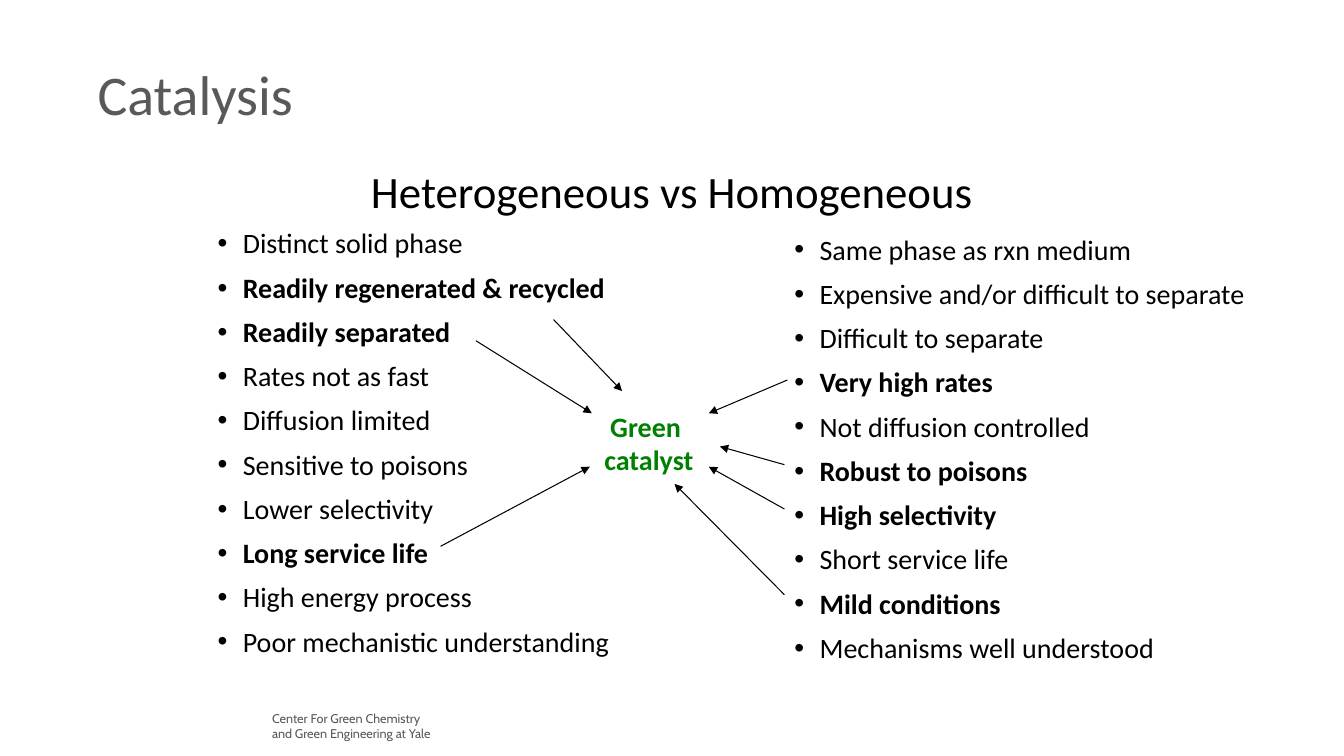
from pptx import Presentation
from pptx import util as u
from pptx.dml.color import RGBColor
from pptx.enum import shapes, text
from pptx.oxml.ns import qn
from lxml import etree

COLORS = {"ink": "000000", "gray": "595959", "green": "008000", "white": "FFFFFF"}

HETEROGENEOUS = [
    ("Distinct solid phase", False),
    ("Readily regenerated & recycled", True),
    ("Readily separated", True),
    ("Rates not as fast", False),
    ("Diffusion limited", False),
    ("Sensitive to poisons", False),
    ("Lower selectivity", False),
    ("Long service life", True),
    ("High energy process", False),
    ("Poor mechanistic understanding", False),
]
HOMOGENEOUS = [
    ("Same phase as rxn medium", False),
    ("Expensive and/or difficult to separate", False),
    ("Difficult to separate", False),
    ("Very high rates", True),
    ("Not diffusion controlled", False),
    ("Robust to poisons", True),
    ("High selectivity", True),
    ("Short service life", False),
    ("Mild conditions", True),
    ("Mechanisms well understood", False),
]
ARROWS = [
    (4.72, 3.38, 5.87, 4.1),
    (5.49, 3.17, 6.17, 3.88),
    (4.37, 5.42, 5.85, 4.63),
    (7.78, 4.61, 7.14, 4.43),
    (7.81, 3.77, 7.03, 4.1),
    (7.78, 5.05, 7.03, 4.63),
    (7.78, 5.9, 6.69, 4.8),
]


def rgb(name):
    return RGBColor.from_string(COLORS[name])


def inches(values):
    return [u.Inches(v) for v in values]


def format_runs(p, size, color, bold=False, font="Calibri"):
    for r in p.runs:
        r.font.name = font
        r.font.size = u.Pt(size)
        r.font.bold = bold
        r.font.color.rgb = rgb(color)


def fill_text(sp, content, size, color, bold=False, font="Calibri", align=text.PP_ALIGN.LEFT):
    sp.text_frame.text = content
    for p in sp.text_frame.paragraphs:
        p.alignment = align
        format_runs(p, size, color, bold, font)


def add_label(s, box, content, size, color, font="Calibri", wrap=False):
    sp = s.shapes.add_textbox(*inches(box))
    sp.text_frame.word_wrap = wrap
    fill_text(sp, content, size, color, font=font)


def add_bullets(s, box, items):
    tf = s.shapes.add_textbox(*inches(box)).text_frame
    tf.word_wrap = True
    for i, (item, bold) in enumerate(items):
        p = tf.add_paragraph() if i else tf.paragraphs[0]
        p.text = item
        p.line_spacing = 0.9
        p.space_before = u.Pt(10 if i else 0)
        pPr = p._p.get_or_add_pPr()
        pPr.set("marL", str(u.Inches(0.25)))
        pPr.set("indent", str(-u.Inches(0.25)))
        etree.SubElement(pPr, qn("a:buFont")).set("typeface", "Arial")
        etree.SubElement(pPr, qn("a:buChar")).set("char", "•")
        format_runs(p, 20, "ink", bold)


def add_arrow(s, ends):
    c = s.shapes.add_connector(shapes.MSO_CONNECTOR.STRAIGHT, *inches(ends))
    c.line.color.rgb = rgb("ink")
    c.line.width = u.Pt(0.75)
    etree.SubElement(c.line._get_or_add_ln(), qn("a:tailEnd")).set("type", "triangle")
    etree.SubElement(c._element.spPr, qn("a:effectLst"))


def add_goal(s, box, content):
    sp = s.shapes.add_shape(shapes.MSO_SHAPE.RECTANGLE, *inches(box))
    sp.shadow.inherit = False
    sp.fill.solid()
    sp.fill.fore_color.rgb = rgb("white")
    sp.line.fill.background()
    sp.text_frame.word_wrap = False
    sp.text_frame.vertical_anchor = text.MSO_ANCHOR.TOP
    fill_text(sp, content, 20, "green", bold=True, align=text.PP_ALIGN.CENTER)


def set_title(s, box, content):
    sp = s.shapes.title
    sp.left, sp.top, sp.width, sp.height = inches(box)
    sp.text_frame.vertical_anchor = text.MSO_ANCHOR.MIDDLE
    fill_text(sp, content, 32, "ink", align=text.PP_ALIGN.CENTER)
    sp.text_frame.paragraphs[0].line_spacing = 0.9


def main():
    prs = Presentation()
    prs.slide_width, prs.slide_height = inches((13.33, 7.5))
    s = prs.slides.add_slide(prs.slide_layouts[5])
    set_title(s, (2.25, 1.31, 8.83, 1.22), "Heterogeneous vs Homogeneous")
    add_label(s, (0.87, 0.54, 2.16, 0.77), "Catalysis", 40, "gray")
    add_bullets(s, (2.06, 2.23, 4.39, 4.47), HETEROGENEOUS)
    for ends in ARROWS:
        add_arrow(s, ends)
    add_goal(s, (5.89, 4.01, 1.09, 0.77), "Green \ncatalyst")
    add_bullets(s, (7.78, 2.29, 4.78, 4.35), HOMOGENEOUS)
    add_label(s, (2.6, 7, 1.86, 0.4), "Center For Green Chemistry\nand Green Engineering at Yale",
              9, "gray", font="Cabin", wrap=True)
    prs.save("out.pptx")


if __name__ == "__main__":
    main()
